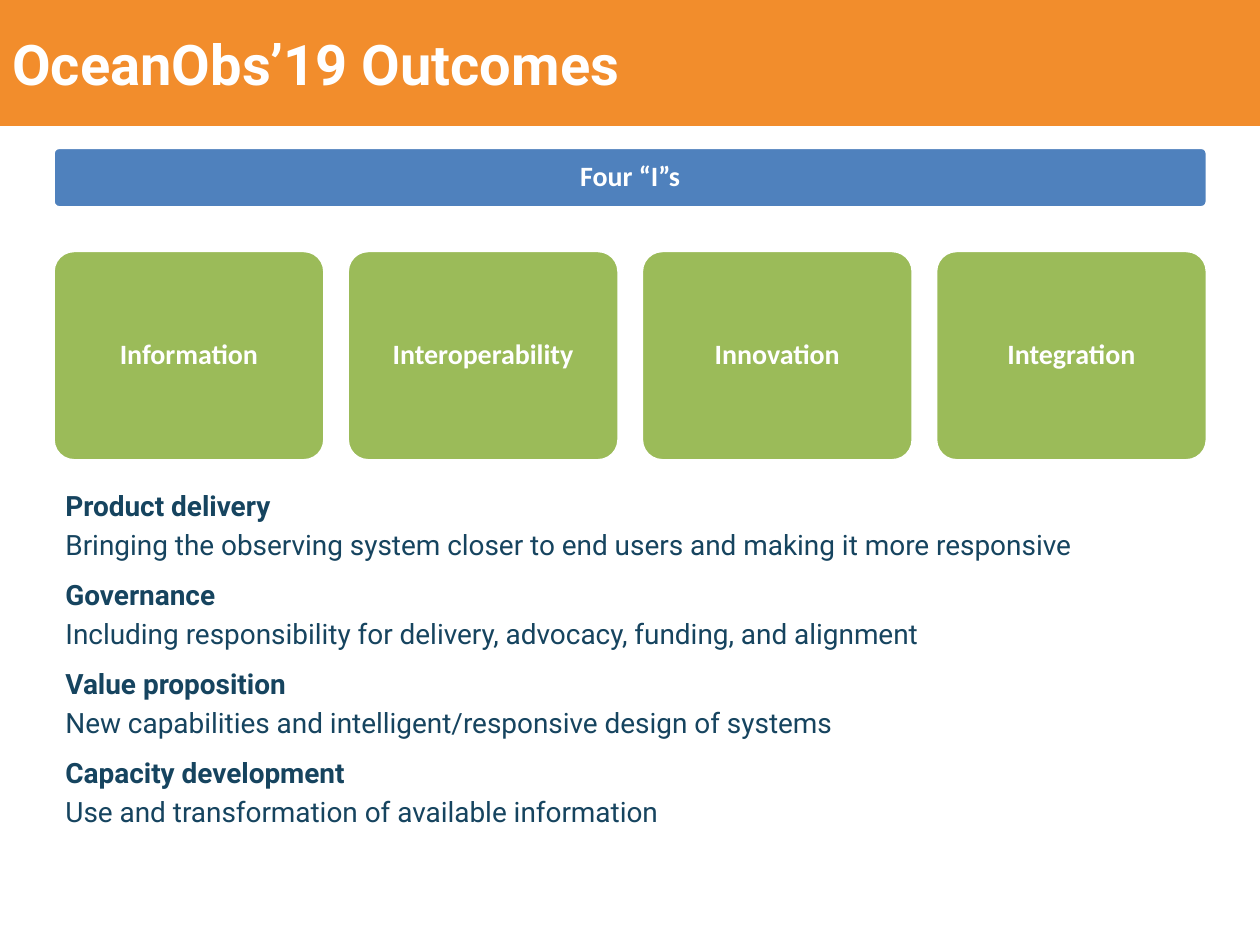
from pptx import Presentation
from pptx.dml.color import RGBColor
from pptx.enum.shapes import MSO_SHAPE
from pptx.enum.text import MSO_ANCHOR, PP_ALIGN
from pptx.util import Cm, Pt

ORANGE = RGBColor(0xF2, 0x8D, 0x2C)
BLUE = RGBColor(0x4F, 0x81, 0xBD)
GREEN = RGBColor(0x9B, 0xBB, 0x59)
NAVY = RGBColor(0x16, 0x44, 0x5F)
WHITE = RGBColor(0xFF, 0xFF, 0xFF)

MARGIN = 1.07
CONTENT_WIDTH = 23.27
CARD_WIDTH = 5.48

PRINCIPLES = ["Information", "Interoperability", "Innovation", "Integration"]
OUTCOMES = [
    ("Product delivery",
     "Bringing the observing system closer to end users and making it more responsive"),
    ("Governance",
     "Including responsibility for delivery, advocacy, funding, and alignment"),
    ("Value proposition",
     "New capabilities and intelligent/responsive design of systems"),
    ("Capacity development",
     "Use and transformation of available information"),
]


class OutcomesSlide:
    heading = {"name": "Roboto", "size": Pt(32), "bold": True}
    label = {"name": "Calibri", "size": Pt(16), "bold": True}
    body = {"name": "Roboto", "size": Pt(16)}

    def __init__(self, deck):
        self.slide = deck.slides.add_slide(deck.slide_layouts[6])

    def styled_run(self, paragraph, text, color, **style):
        run = paragraph.add_run()
        run.text = text
        for attribute, value in style.items():
            setattr(run.font, attribute, value)
        run.font.color.rgb = color

    def block(self, kind, left, top, width, height, fill):
        block = self.slide.shapes.add_shape(
            kind, Cm(left), Cm(top), Cm(width), Cm(height))
        block.shadow.inherit = False
        block.fill.solid()
        block.fill.fore_color.rgb = fill
        block.text_frame.word_wrap = True
        block.text_frame.vertical_anchor = MSO_ANCHOR.MIDDLE
        return block

    def banner(self, text):
        banner = self.block(MSO_SHAPE.RECTANGLE, 0, 0, 25.4, 2.54, ORANGE)
        banner.line.fill.background()
        title = banner.text_frame.paragraphs[0]
        title.alignment = PP_ALIGN.LEFT
        self.styled_run(title, text, WHITE, **self.heading)

    def card(self, text, left, top, width, height, fill):
        card = self.block(MSO_SHAPE.ROUNDED_RECTANGLE, left, top, width, height, fill)
        card.adjustments[0] = 0.1
        card.line.color.rgb = WHITE
        card.line.width = Pt(2)
        caption = card.text_frame.paragraphs[0]
        caption.alignment = PP_ALIGN.CENTER
        caption.line_spacing = 0.9
        self.styled_run(caption, text, WHITE, **self.label)

    def outcomes(self, entries, left, top, width, height):
        """Stack each bold topic above its one-line description."""
        frame = self.slide.shapes.add_textbox(
            Cm(left), Cm(top), Cm(width), Cm(height)).text_frame
        frame.word_wrap = True
        for index, (topic, description) in enumerate(entries):
            topic_line = frame.add_paragraph() if index else frame.paragraphs[0]
            topic_line.space_before = Pt(3.2 if index else 0)
            self.styled_run(topic_line, topic, NAVY, bold=True, **self.body)
            detail_line = frame.add_paragraph()
            detail_line.space_before = Pt(3.2)
            detail_line.space_after = Pt(6)
            self.styled_run(detail_line, description, NAVY, bold=False, **self.body)


def main():
    deck = Presentation()
    deck.slide_width, deck.slide_height = Cm(25.4), Cm(19.05)
    page = OutcomesSlide(deck)

    page.banner("OceanObs’19 Outcomes")
    page.outcomes(OUTCOMES, MARGIN, 9.73, 22.66, 7.62)
    page.card("Four “I”s", MARGIN, 2.97, CONTENT_WIDTH, 1.22, BLUE)
    pitch = (CONTENT_WIDTH - CARD_WIDTH) / (len(PRINCIPLES) - 1)
    for column, principle in enumerate(PRINCIPLES):
        page.card(principle, MARGIN + column * pitch, 5.05, CARD_WIDTH, 4.24, GREEN)

    deck.save("out.pptx")


if __name__ == "__main__":
    main()
